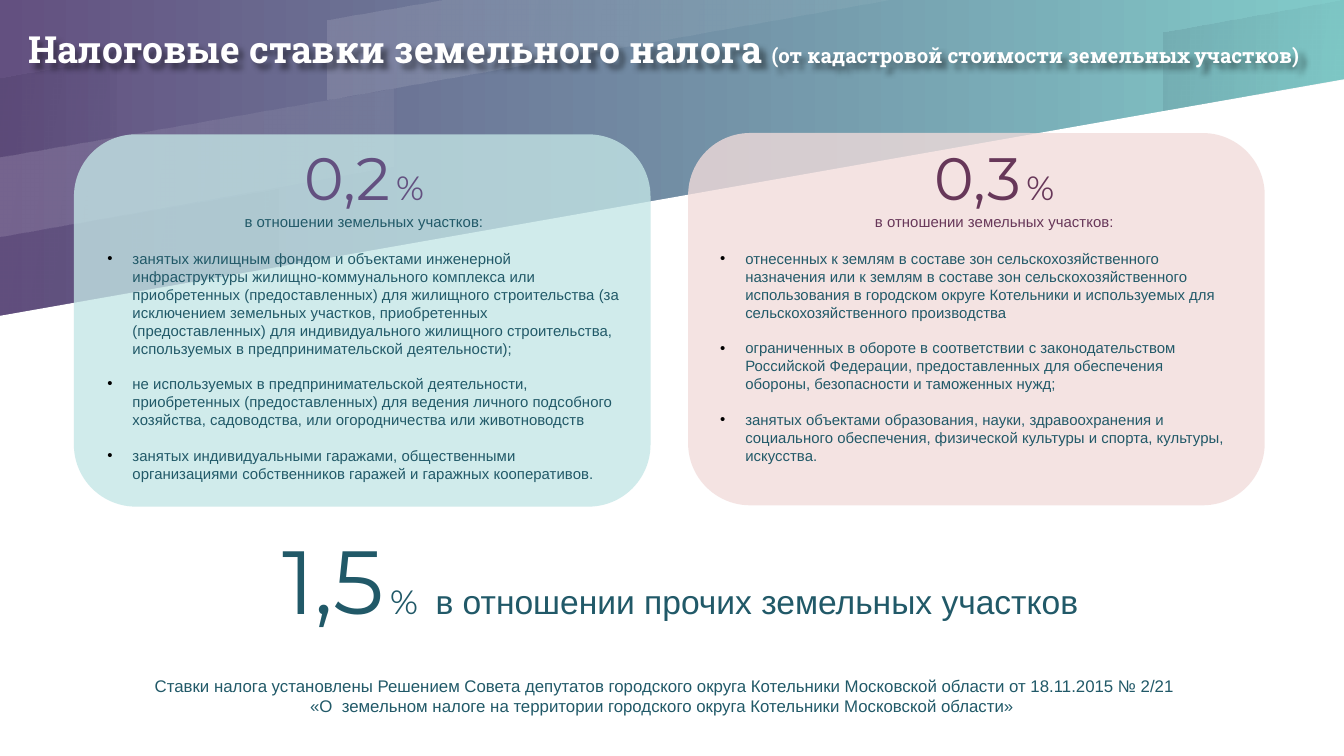
from dataclasses import dataclass

from lxml.etree import SubElement
from pptx import Presentation
from pptx.dml.color import RGBColor
from pptx.enum.shapes import MSO_SHAPE
from pptx.enum.text import MSO_ANCHOR, MSO_AUTO_SIZE, PP_ALIGN
from pptx.oxml.ns import qn
from pptx.util import Inches, Pt

TEAL, PLUM, VIOLET, WHITE = "215968", "673759", "635080", "FFFFFF"
NAVY = "00001A"
BODY, DISPLAY, HEADING = "Arial", "Montserrat", "Roboto Slab"
PAGE_WIDTH = 10
PAGE_HEIGHT = PAGE_WIDTH * 9 / 16
BULLET_INDENT = Inches(3 / 16)


@dataclass
class Band:
    points: list[tuple[float, float]]
    color: str
    start_alpha: int
    end_alpha: int


@dataclass
class Span:
    text: str
    size: float
    font: str
    color: str
    bold: bool = False


@dataclass
class Card:
    left: float
    top: float
    fill: str
    rate: str
    rate_left: float
    rate_color: str
    caption_color: str
    list_left: float
    list_width: float
    list_height: float
    items: list[str]


BANDS = [
    Band([(3.32, 0), (2.44, 0.15), (2.44, 0.74), (6.65, 0)], WHITE, 12, 5),
    Band([(0, 0.58), (0, 1.17), (0.87, 1.02), (0.87, 0.43)], NAVY, 8, 2),
    Band([(0, 1.76), (0, 2.35), (2.07, 1.99), (2.07, 1.4)], NAVY, 2, 8),
    Band([(10, 0), (9.99, 0), (8.66, 0.24), (8.66, 0.82), (10, 0.59)], NAVY, 8, 2),
    Band([(0, 1.17), (0, 1.76), (2.93, 1.24), (2.93, 0.66)], WHITE, 12, 5),
]

CARDS = [
    Card(0.55, 1, "C4E6E6", "0,2", 1.41, VIOLET, TEAL, 0.7, 4.02, 2.14, [
        "занятых жилищным фондом и объектами инженерной инфраструктуры "
        "жилищно-коммунального комплекса или приобретенных (предоставленных) для "
        "жилищного строительства (за исключением земельных участков, приобретенных "
        "(предоставленных) для индивидуального жилищного строительства, "
        "используемых в предпринимательской деятельности);",
        "не используемых в предпринимательской деятельности, приобретенных "
        "(предоставленных) для ведения личного подсобного хозяйства, садоводства, "
        "или огородничества или животноводств",
        "занятых индивидуальными гаражами, общественными организациями "
        "собственников гаражей и гаражных кооперативов.",
    ]),
    Card(5.12, 0.99, "F2DCDB", "0,3", 6.1, PLUM, PLUM, 5.26, 4, 2, [
        "отнесенных к землям в составе зон сельскохозяйственного назначения или к "
        "землям в составе зон сельскохозяйственного использования в городском "
        "округе Котельники и используемых для сельскохозяйственного производства",
        "ограниченных в обороте в соответствии с законодательством Российской "
        "Федерации, предоставленных для обеспечения обороны, безопасности и "
        "таможенных нужд;",
        "занятых объектами образования, науки, здравоохранения и социального "
        "обеспечения, физической культуры и спорта, культуры, искусства.",
    ]),
]


def rgb(color: str) -> RGBColor:
    return RGBColor.from_string(color)


def apply(target, formats: dict) -> None:
    for attribute, value in formats.items():
        setattr(target, attribute, value)


def set_alpha(fill_element, percents: list[int]) -> None:
    for color, percent in zip(fill_element.iter(qn("a:srgbClr")), percents):
        SubElement(color, qn("a:alpha"), val=str(percent * 1000))


def set_gradient(fill, colors: list[str], angle: float) -> None:
    fill.gradient()
    fill.gradient_angle = angle
    for stop, position, color in zip(fill.gradient_stops, (0, 1), colors):
        stop.position = position
        stop.color.rgb = rgb(color)


def draw_outline(slide, points: list[tuple[float, float]]):
    corners = [(Inches(x), Inches(y)) for x, y in points]
    builder = slide.shapes.build_freeform(*corners[0])
    builder.add_line_segments(corners[1:], close=True)
    outline = builder.convert_to_shape()
    outline.shadow.inherit = False
    outline.line.fill.background()
    return outline


def draw_band(slide, band: Band) -> None:
    outline = draw_outline(slide, band.points)
    set_gradient(outline.fill, [band.color] * 2, 350)
    set_alpha(outline._element.spPr, [band.start_alpha, band.end_alpha])


def cast_shadow(box) -> None:
    effects = SubElement(box._element.spPr, qn("a:effectLst"))
    shadow = SubElement(effects, qn("a:outerShdw"), blurRad="38100",
                        dist="38100", dir="2700000", algn="tl")
    SubElement(shadow, qn("a:srgbClr"), val="000000")
    set_alpha(shadow, [43])


def add_text(slide, left: float, top: float, width: float, height: float,
             paragraphs: list[list[Span]], **paragraph_formats):
    box = slide.shapes.add_textbox(*map(Inches, (left, top, width, height)))
    frame = box.text_frame
    apply(frame, {"word_wrap": True, "auto_size": MSO_AUTO_SIZE.SHAPE_TO_FIT_TEXT})
    for index, spans in enumerate(paragraphs):
        paragraph = frame.add_paragraph() if index else frame.paragraphs[0]
        apply(paragraph, paragraph_formats)
        for span in spans:
            add_span(paragraph, span)
    return box


def add_span(paragraph, span: Span) -> None:
    for index, line in enumerate(span.text.split("\n")):
        if index:
            paragraph.add_line_break()
        run = paragraph.add_run()
        run.text = line
        apply(run.font, {"size": Pt(span.size), "name": span.font, "bold": span.bold})
        run.font.color.rgb = rgb(span.color)


def rate_spans(rate: str, size: float, color: str) -> list[Span]:
    parts = [(rate, size), (" ", 11), ("%", 18)]
    return [Span(text, points, DISPLAY, color) for text, points in parts]


def add_bullet(paragraph) -> None:
    properties = paragraph._p.get_or_add_pPr()
    properties.set("marL", str(BULLET_INDENT))
    properties.set("indent", str(-BULLET_INDENT))
    bullet_color = SubElement(properties, qn("a:buClr"))
    SubElement(bullet_color, qn("a:srgbClr"), val="000000")
    SubElement(properties, qn("a:buFont"), typeface=BODY)
    SubElement(properties, qn("a:buChar"), char="•")


def draw_panel(slide, card: Card) -> None:
    panel = slide.shapes.add_shape(
        MSO_SHAPE.ROUNDED_RECTANGLE, *map(Inches, (card.left, card.top, 4.29, 2.77)))
    panel.shadow.inherit = False
    panel.line.fill.background()
    panel.fill.solid()
    panel.fill.fore_color.rgb = rgb(card.fill)
    set_alpha(panel._element.spPr, [78])


def draw_card(slide, card: Card) -> None:
    draw_panel(slide, card)
    caption = Span("в отношении земельных участков:", 8, BODY, card.caption_color)
    add_text(slide, card.rate_left, 1, 2.6, 0.77,
             [rate_spans(card.rate, 32, card.rate_color), [caption]],
             alignment=PP_ALIGN.CENTER)
    plots = add_text(slide, card.list_left, 1.81, card.list_width, card.list_height,
                     [[Span(item, 8, BODY, TEAL)] for item in card.items])
    for index, paragraph in enumerate(plots.text_frame.paragraphs):
        if index:
            paragraph.space_before = Pt(9.5)
        add_bullet(paragraph)


def main() -> None:
    deck = Presentation()
    apply(deck, {"slide_width": Inches(PAGE_WIDTH), "slide_height": Inches(PAGE_HEIGHT)})
    slide = deck.slides.add_slide(deck.slide_layouts[6])
    set_gradient(slide.background.fill, [VIOLET, "81CBC9"], 0)

    page = draw_outline(slide, [(0, PAGE_HEIGHT), (PAGE_WIDTH, PAGE_HEIGHT),
                                (PAGE_WIDTH, 0.59), (0, 2.35)])
    page.fill.solid()
    page.fill.fore_color.rgb = rgb(WHITE)
    for band in BANDS:
        draw_band(slide, band)

    title = add_text(slide, 0.21, 0.22, 9.57, 0.33, [[
        Span("Налоговые ставки земельного налога ", 20, HEADING, WHITE, True),
        Span("(от кадастровой стоимости земельных участков)", 11, HEADING, WHITE, True),
    ]], line_spacing=0.9)
    cast_shadow(title)
    apply(title.text_frame, {
        "auto_size": MSO_AUTO_SIZE.NONE, "vertical_anchor": MSO_ANCHOR.MIDDLE,
        "margin_left": 0, "margin_right": 0, "margin_top": 0, "margin_bottom": 0})

    for card in CARDS:
        draw_card(slide, card)

    add_text(slide, 1.05, 3.86, 8.03, 0.91, [
        rate_spans("1,5", 48, TEAL) + [
            Span(" ", 36, DISPLAY, TEAL),
            Span("в отношении прочих земельных участков", 18, BODY, TEAL),
        ]], alignment=PP_ALIGN.CENTER)
    add_text(slide, 0.21, 4.98, 9.46, 0.4, [[Span(
        "Ставки налога установлены Решением Совета депутатов городского округа "
        "Котельники Московской области от 18.11.2015 № 2/21\n"
        "«О  земельном налоге на территории городского округа Котельники "
        "Московской области» ", 9, BODY, TEAL)]], alignment=PP_ALIGN.CENTER)
    deck.save("out.pptx")


if __name__ == "__main__":
    main()
